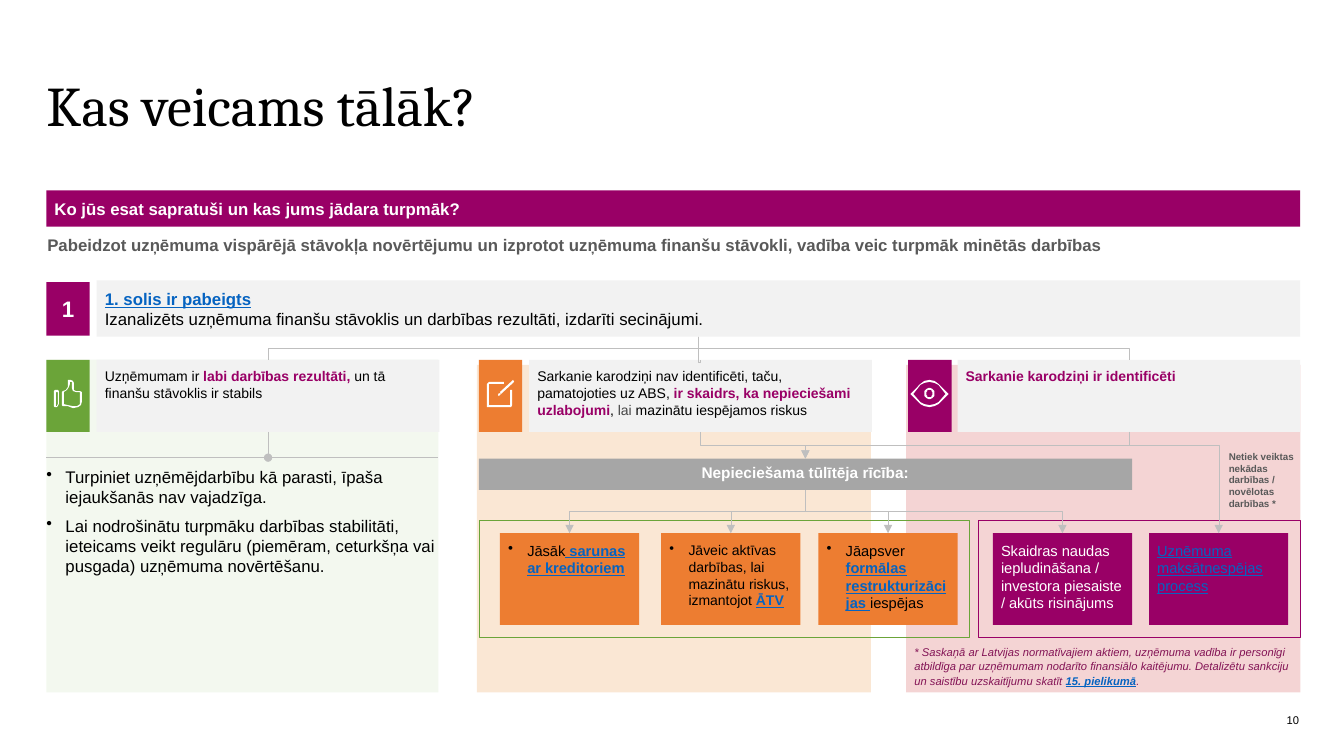
import math
from lxml import etree
from pptx import Presentation
from pptx.dml.color import RGBColor
from pptx.enum.shapes import MSO_CONNECTOR, MSO_SHAPE
from pptx.enum.text import MSO_ANCHOR, PP_ALIGN
from pptx.oxml.ns import qn
from pptx.util import Pt

RECT = MSO_SHAPE.RECTANGLE
LINE, ELBOW = MSO_CONNECTOR.STRAIGHT, MSO_CONNECTOR.ELBOW
TOP, MIDDLE = MSO_ANCHOR.TOP, MSO_ANCHOR.MIDDLE
LEFT, CENTER, RIGHT = PP_ALIGN.LEFT, PP_ALIGN.CENTER, PP_ALIGN.RIGHT

BLACK = RGBColor(0x00, 0x00, 0x00)
WHITE = RGBColor(0xFF, 0xFF, 0xFF)
PLUM = RGBColor(0x99, 0x00, 0x66)
WINE = RGBColor(0x83, 0x13, 0x55)
GREEN = RGBColor(0x6B, 0xA4, 0x39)
ORANGE = RGBColor(0xED, 0x7D, 0x31)
BLUE = RGBColor(0x05, 0x63, 0xC1)
PALE = RGBColor(0xF2, 0xF2, 0xF2)
SILVER = RGBColor(0xBF, 0xBF, 0xBF)
GREY = RGBColor(0xA6, 0xA6, 0xA6)
SLATE = RGBColor(0x59, 0x59, 0x59)
DARK = RGBColor(0x46, 0x46, 0x46)
ROSE = RGBColor(0xC0, 0x00, 0x00)
AMBER = RGBColor(0xE5, 0x71, 0x00)
MINT = RGBColor(0xE2, 0xF0, 0xD9)

LINK = dict(color=BLUE, bold=True, underline=True)
KEY = dict(color=PLUM, bold=True)
HANG = 13.7
FLUSH = (0, 0, 0, 0)
INSET = (5.8, 5.8, 5.8, 5.8)
SIDES = ("margin_left", "margin_top", "margin_right", "margin_bottom")


class Board:
    def __init__(self, slide):
        self.shapes = slide.shapes
        self.font = dict(name="Arial", size=12, bold=False, color=BLACK)

    def rect(self, x, y, w, h, fill=None, line=None, alpha=None):
        box = self.shapes.add_shape(RECT, Pt(x), Pt(y), Pt(w), Pt(h))
        self.paint(box, fill, line)
        if alpha:
            tint = box._element.spPr.find(".//" + qn("a:srgbClr"))
            etree.SubElement(tint, qn("a:alpha")).set("val", str(alpha * 1000))
        return box

    def paint(self, shape, fill, line=None):
        shape.shadow.inherit = False
        if fill is None:
            shape.fill.background()
        else:
            shape.fill.solid()
            shape.fill.fore_color.rgb = fill
        if line is None:
            shape.line.fill.background()
        else:
            shape.line.color.rgb = line
            shape.line.width = Pt(0.25)

    def label(self, x, y, w, h, paras, **style):
        box = self.shapes.add_textbox(Pt(x), Pt(y), Pt(w), Pt(h))
        return self.put(box, paras, **style)

    def put(self, box, paras, anchor=TOP, inset=INSET, align=LEFT,
            space=None, after=0, bullet=False, **font):
        """Each paragraph is a string or a list of (text, format) runs."""
        frame = box.text_frame
        edges = dict(zip(SIDES, map(Pt, inset)))
        for key, val in dict(edges, word_wrap=True, vertical_anchor=anchor).items():
            setattr(frame, key, val)
        for i, runs in enumerate(paras):
            para = frame.paragraphs[0] if i == 0 else frame.add_paragraph()
            if bullet:
                props = para._p.get_or_add_pPr()
                props.set("marL", str(Pt(HANG)))
                props.set("indent", str(-Pt(HANG)))
                etree.SubElement(props, qn("a:buChar")).set("char", "•")
            look = dict(alignment=align, line_spacing=space, space_after=Pt(after))
            for key, val in look.items():
                setattr(para, key, val)
            for text, extra in [(runs, {})] if isinstance(runs, str) else runs:
                run = para.add_run()
                run.text = text
                self.style(run.font, {**self.font, **font, **extra})
        return box

    def style(self, font, look):
        for key, val in look.items():
            if key == "color":
                font.color.rgb = val
            else:
                setattr(font, key, Pt(val) if key == "size" else val)

    def wire(self, kind, x1, y1, x2, y2, tail=None):
        link = self.shapes.add_connector(kind, Pt(x1), Pt(y1), Pt(x2), Pt(y2))
        link.line.color.rgb = SILVER
        link.line.width = Pt(0.25)
        if tail:
            edge = link._element.spPr.find(qn("a:ln"))
            etree.SubElement(edge, qn("a:tailEnd")).set("type", tail)
        etree.SubElement(link._element.spPr, qn("a:effectLst"))
        return link

    def drop(self, x1, y1, x2, y2, tail=None, bend=0.5):
        """Elbow that leaves downwards, turns at the bend and ends downwards."""
        mid, level = (x1 + x2) / 2, (y1 + y2) / 2
        half, rise = (y2 - y1) / 2, abs(x2 - x1) / 2
        right = x2 > x1
        if right:
            half = -half
        link = self.wire(ELBOW, mid - half, level - rise, mid + half, level + rise, tail)
        props = link._element.spPr
        props.find(qn("a:xfrm")).set("rot", str((270 if right else 90) * 60000))
        geom = props.find(qn("a:prstGeom"))
        guide = etree.SubElement(geom.find(qn("a:avLst")), qn("a:gd"))
        guide.set("name", "adj1")
        guide.set("fmla", f"val {round(bend * 100000)}")

    def icon(self, x, y, loops):
        """Loops are in units of 0.72 pt; inner loops cut holes."""
        pen = self.shapes.build_freeform(*loops[0][0], scale=Pt(0.72))
        for i, loop in enumerate(loops):
            if i:
                pen.move_to(*loop[0])
            pen.add_line_segments(loop[1:], close=True)
        self.paint(pen.convert_to_shape(Pt(x), Pt(y)), WHITE)


def ring(x, y, r):
    turns = [math.tau * i / 24 for i in range(24)]
    return [(x + r * math.cos(t), y + r * math.sin(t)) for t in turns]


def lens(left, shoulder, peak):
    top = [(left, 13.5), (10, shoulder), (14, peak + 0.8), (19, peak),
           (24, peak + 0.8), (28, shoulder), (38 - left, 13.5)]
    return top + [(x, 27 - y) for x, y in top[-2:0:-1]]


THUMB = [
    [(0, 11), (1, 10), (4, 10), (5, 11), (5, 24), (4.5, 26), (3, 27), (1, 27), (0, 26)],
    [(1.5, 11.5), (3.5, 11.5), (3.5, 24), (3, 25.5), (1.5, 25.5)],
    [(8, 12), (9, 11), (12, 9.5), (13.5, 7), (14, 4), (14, 0.5), (15, 0), (17, 0),
     (19, 1), (19.5, 3), (19.5, 8), (20, 10), (22, 11), (26, 11), (27.5, 12),
     (28, 13), (28, 21), (27, 25), (24, 27), (19, 27.5), (14, 26.5), (9, 25.5), (8, 25)],
    [(9.5, 12.5), (13, 10.5), (15, 7), (15.5, 4), (15.5, 1.5), (17, 1.5), (18, 2.5),
     (18, 8), (19, 11), (22, 12.5), (26.5, 12.5), (26.5, 21), (25.5, 24.5),
     (23, 25.7), (19, 26), (14, 25), (9.5, 24)],
]
PEN = [
    [(17, 2), (17, 4), (2, 4), (2, 25), (23, 25), (23, 10), (25, 10), (25, 25),
     (23.5, 27), (0, 27), (0, 4), (1.5, 2)],
    [(11, 15), (12, 13), (13.5, 14.5), (12, 16)],
    [(13, 12), (25.5, 0), (27, 1.5), (14.5, 13.5)],
]
EYE = [lens(0, 3.5, 0), lens(3, 5, 2), ring(19, 13.5, 5.5), ring(19, 13.5, 3.5)]

deck = Presentation()
deck.slide_width, deck.slide_height = Pt(960), Pt(540)
board = Board(deck.slides.add_slide(deck.slide_layouts[6]))

# Column backgrounds and frames
board.rect(647.3, 260.6, 281.5, 234, ROSE, alpha=17)
board.rect(340.6, 260.6, 281.5, 234, AMBER, alpha=17)
board.rect(33.1, 257, 280, 237.6, MINT, alpha=41)
board.rect(698.4, 371.5, 230.4, 83.5, line=PLUM)
board.rect(342, 371.5, 350, 83.5, line=GREEN)

# Title, band and lead
board.label(33.1, 25.9, 895, 103.7, ["Kas veicams tālāk?"], anchor=MIDDLE,
            inset=FLUSH, space=0.9, name="Cambria", size=40)
board.put(board.rect(33.1, 136.1, 895.7, 25.9, PLUM),
          ["Ko jūs esat sapratuši un kas jums jādara turpmāk?"],
          anchor=MIDDLE, bold=True, color=WHITE, inset=(5.8, 2.9, 5.8, 2.9))
board.label(33.8, 167, 895, 14.4, [
    "Pabeidzot uzņēmuma vispārējā stāvokļa novērtējumu un izprotot uzņēmuma "
    "finanšu stāvokli, vadība veic turpmāk minētās darbības"],
    inset=FLUSH, space=1.07, bold=True, color=SLATE)

# Step one
board.put(board.rect(69.1, 200.2, 859.7, 40.3, PALE), [
    [("1. solis ir pabeigts", LINK)],
    "Izanalizēts uzņēmuma finanšu stāvoklis un darbības rezultāti, izdarīti secinājumi."],
    anchor=MIDDLE)
board.put(board.rect(33.1, 201.6, 31, 38.2, PLUM), ["1"], anchor=MIDDLE,
          align=CENTER, inset=FLUSH, size=16, bold=True, color=WHITE)

# Result cards: badge x, card x, colour, icon, icon offset, runs
RESULTS = [
    (33.1, 69.1, GREEN, THUMB, 5.3, [
        ("Uzņēmumam ir ", {}), ("labi darbības rezultāti,", KEY),
        (" un tā finanšu stāvoklis ir stabils", {})]),
    (342, 378, ORANGE, PEN, 5.8, [
        ("Sarkanie karodziņi nav identificēti, taču, pamatojoties uz ABS, ", {}),
        ("ir skaidrs, ka nepieciešami uzlabojumi", KEY), (", ", {}),
        ("lai", dict(color=DARK)), (" mazinātu iespējamos riskus", {})]),
    (648.7, 684, PLUM, EYE, 1.5, [("Sarkanie karodziņi ir identificēti", KEY)]),
]
cards = []
for left, x, fill, loops, shift, runs in RESULTS:
    board.rect(left, 257, 31, 51.5, fill)
    card = board.rect(x, 257, 244.8, 51.5, PALE)
    cards.append(board.put(card, [runs], size=10, inset=(5.8, 5.8, 5, 5.8)))
    board.icon(left + shift, 271.4, loops)

# Good results
board.label(33.1, 327.6, 280, 148.3, [
    "Turpiniet uzņēmējdarbību kā parasti, īpaša iejaukšanās nav vajadzīga.",
    "Lai nodrošinātu turpmāku darbības stabilitāti, ieteicams veikt regulāru "
    "(piemēram, ceturkšņa vai pusgada) uzņēmuma novērtēšanu."],
    inset=(0, 5.8, 0, 5.8), after=6, bullet=True)
board.wire(LINE, 33.1, 326.9, 313.2, 326.9)
stem = board.wire(LINE, 191.5, 308.5, 191.5, 326.9, "oval")
stem.begin_connect(cards[0], 2)

# Immediate action bar
board.put(board.rect(342, 327.6, 466.6, 22.3, GREY), ["Nepieciešama tūlītēja rīcība:"],
          align=CENTER, inset=(7.2, 3.6, 7.2, 3.6), size=11, bold=True, color=WHITE)

# Actions: x, fill, bullet, size, runs
ACTIONS = [
    (357.1, ORANGE, True, 10.5, [("Jāsāk", {}), (" sarunas ar kreditoriem", LINK)]),
    (472.3, ORANGE, True, 10, [
        ("Jāveic aktīvas darbības, lai mazinātu riskus, izmantojot ", {}), ("ĀTV", LINK)]),
    (584.6, ORANGE, True, 10.5, [
        ("Jāapsver ", {}), ("formālas restrukturizācijas ", LINK), ("iespējas", {})]),
    (709.2, PLUM, False, 10.5, [
        ("Skaidras naudas iepludināšana / investora piesaiste / akūts risinājums",
         dict(color=WHITE))]),
    (820.8, PLUM, False, 10.5, [
        ("Uzņēmuma maksātnespējas process", dict(color=BLUE, underline=True))]),
]
for x, fill, bullet, size, runs in ACTIONS:
    board.put(board.rect(x, 380.9, 99.4, 65.5, fill), [runs], bullet=bullet, size=size)

# Branches
for x, bend in ((191.5, 0.5), (500.4, 1.1), (806.4, 0.5)):
    board.drop(499, 240.5, x, 257, bend=bend)
for x in (500.4, 806.4):
    board.drop(x, 308.5, 575.3, 327.6, "triangle")
for x, *rest in ACTIONS[:4]:
    board.drop(575.3, 349.9, x + 49.7, 380.9, "triangle")
board.drop(806.4, 308.5, 870.5, 380.9, "triangle", 0.13)

# Side note, footnote and page number
board.label(877.7, 321.8, 51.1, 42, ["Netiek veiktas nekādas darbības / novēlotas darbības *"],
            inset=FLUSH, size=7, bold=True, color=SLATE)
board.label(647.3, 456.5, 280, 38.2, [[
    ("* Saskaņā ar Latvijas normatīvajiem aktiem, uzņēmuma vadība ir personīgi atbildīga "
     "par uzņēmumam nodarīto finansiālo kaitējumu. Detalizētu sankciju un saistību "
     "uzskaitījumu skatīt ", {}), ("15. pielikumā", LINK), (".", {})]],
    anchor=MIDDLE, inset=(5.8, 3.6, 5.8, 3.6), space=1.07, size=8, italic=True, color=WINE)
board.label(712, 509.8, 216, 9.4, ["10"], anchor=MIDDLE, inset=FLUSH, align=RIGHT, size=8)

deck.save("out.pptx")
